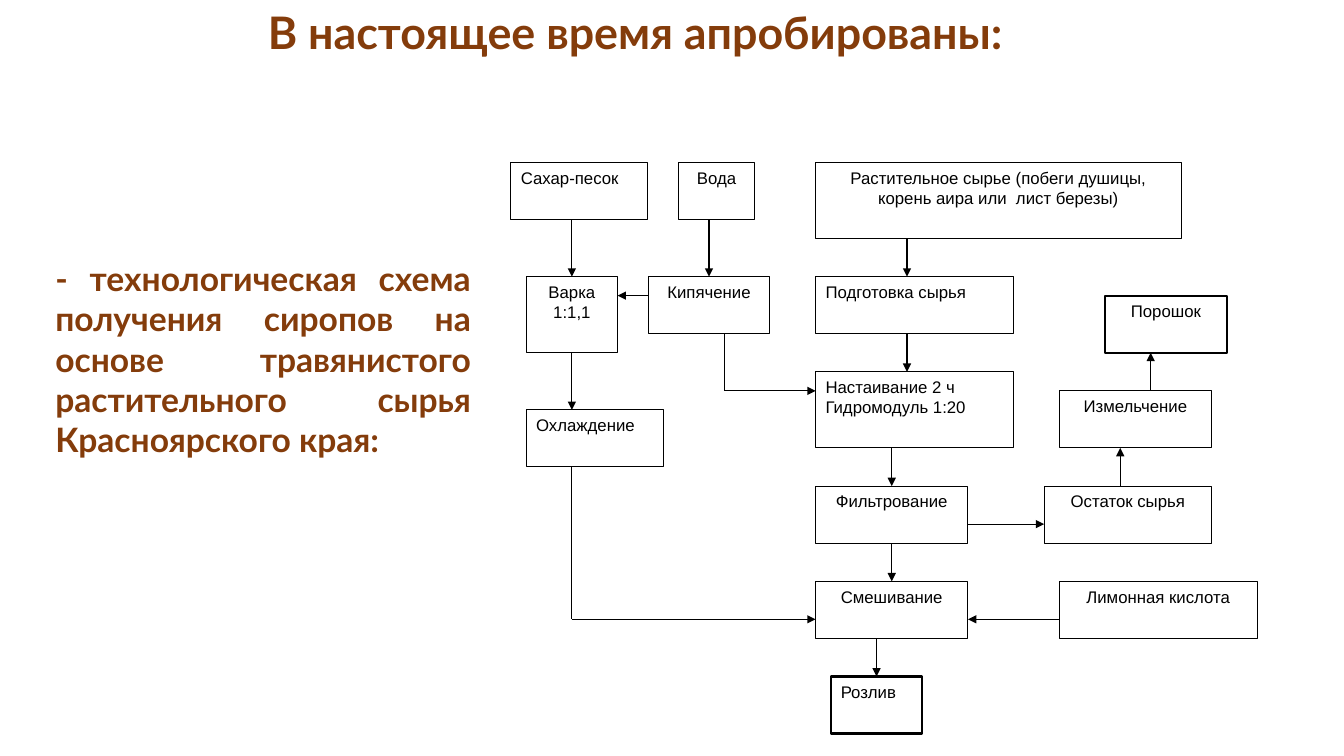
from dataclasses import dataclass

import lxml.etree
import pptx
import pptx.dml.color
import pptx.enum.shapes
import pptx.enum.text
import pptx.oxml.ns
import pptx.util

Pt = pptx.util.Pt
ALIGN = pptx.enum.text.PP_ALIGN
ANCHOR = pptx.enum.text.MSO_ANCHOR
BLACK = pptx.dml.color.RGBColor(0x00, 0x00, 0x00)
WHITE = pptx.dml.color.RGBColor(0xFF, 0xFF, 0xFF)
BROWN = pptx.dml.color.RGBColor(0x84, 0x3C, 0x0B)

# Flowchart grid: origin and step, in points
LEFT, TOP = 365, 116
STEP_X, STEP_Y = 10.88, 13.6

BOX_FONT = {"name": "Arial", "size": Pt(12), "bold": False}
TITLE_FONT = {"name": "Lato", "size": Pt(32), "bold": True}
SIDE_FONT = {"name": "Lato", "size": Pt(24), "bold": True}


@dataclass
class Box:
    """A step of the scheme, placed in grid units."""
    text: str
    col: int
    row: int
    cols: int
    rows: int = 3
    align: ALIGN = ALIGN.CENTER
    border: float = 0.75


@dataclass
class Link:
    """A line between two grid points."""
    x1: int
    y1: int
    x2: int
    y2: int
    arrow: bool = True


BOXES = [
    Box("Сахар-песок", 0, 0, 9, align=ALIGN.LEFT),
    Box("Вода", 11, 0, 5),
    Box("Растительное сырье (побеги душицы, корень аира или  лист березы)",
        20, 0, 24, 4),
    Box("Варка 1:1,1", 1, 6, 6, 4),
    Box("Кипячение", 9, 6, 8),
    Box("Подготовка сырья", 20, 6, 13, align=ALIGN.LEFT),
    Box("Порошок", 39, 7, 8, border=1.5),
    Box("Настаивание 2 ч\nГидромодуль 1:20", 20, 11, 13, 4, ALIGN.LEFT),
    Box("Измельчение", 36, 12, 10),
    Box("Охлаждение", 1, 13, 9, align=ALIGN.LEFT),
    Box("Фильтрование", 20, 17, 10),
    Box("Остаток сырья", 35, 17, 11),
    Box("Смешивание", 20, 22, 10),
    Box("Лимонная кислота", 36, 22, 13),
    Box("Розлив", 21, 27, 6, align=ALIGN.LEFT, border=1.5),
]

LINKS = [
    Link(4, 3, 4, 6),
    Link(13, 3, 13, 6),
    Link(26, 4, 26, 6),
    Link(9, 7, 7, 7),
    Link(26, 9, 26, 11),
    Link(14, 9, 14, 12, arrow=False),
    Link(14, 12, 20, 12),
    Link(4, 10, 4, 13),
    Link(4, 16, 4, 24, arrow=False),
    Link(4, 24, 20, 24),
    Link(25, 15, 25, 17),
    Link(30, 19, 35, 19),
    Link(40, 17, 40, 15),
    Link(42, 12, 42, 10),
    Link(25, 20, 25, 22),
    Link(36, 24, 30, 24),
    Link(24, 25, 24, 27),
]


def grid_x(col: int) -> pptx.util.Length:
    return Pt(LEFT + col * STEP_X)


def grid_y(row: int) -> pptx.util.Length:
    return Pt(TOP + row * STEP_Y)


def write_text(sp, text: str, align: ALIGN, font: dict, color) -> None:
    tf = sp.text_frame
    tf.word_wrap = True
    tf.vertical_anchor = ANCHOR.TOP
    tf.text = text
    for p in tf.paragraphs:
        p.alignment = align
        for r in p.runs:
            for key, value in font.items():
                setattr(r.font, key, value)
            r.font.color.rgb = color


def draw_box(s, box: Box) -> None:
    sp = s.shapes.add_shape(
        pptx.enum.shapes.MSO_SHAPE.RECTANGLE, grid_x(box.col), grid_y(box.row),
        Pt(box.cols * STEP_X), Pt(box.rows * STEP_Y))
    sp.shadow.inherit = False
    sp.fill.solid()
    sp.fill.fore_color.rgb = WHITE
    sp.line.color.rgb = BLACK
    sp.line.width = Pt(box.border)
    write_text(sp, box.text, box.align, BOX_FONT, BLACK)


def draw_link(s, link: Link) -> None:
    cn = s.shapes.add_connector(
        pptx.enum.shapes.MSO_CONNECTOR.STRAIGHT, grid_x(link.x1),
        grid_y(link.y1), grid_x(link.x2), grid_y(link.y2))
    cn.line.color.rgb = BLACK
    cn.line.width = Pt(0.75)
    qn = pptx.oxml.ns.qn
    sp_pr = cn.element.spPr
    if link.arrow:
        lxml.etree.SubElement(sp_pr.find(qn("a:ln")), qn("a:tailEnd"),
                              type="triangle")
    lxml.etree.SubElement(sp_pr, qn("a:effectLst"))


def draw_text(s, x: float, y: float, w: float, h: float, text: str,
              align: ALIGN, font: dict) -> None:
    sp = s.shapes.add_textbox(Pt(x), Pt(y), Pt(w), Pt(h))
    write_text(sp, text, align, font, BROWN)


def main() -> None:
    prs = pptx.Presentation()
    prs.slide_width, prs.slide_height = Pt(960), Pt(540)
    s = prs.slides.add_slide(prs.slide_layouts[6])

    # Title and side text
    draw_text(s, 26.6, 0, 862.6, 46, "В настоящее время апробированы: ",
              ALIGN.CENTER, TITLE_FONT)
    draw_text(s, 32.4, 180.7, 311, 152.6,
              "- технологическая схема получения сиропов на основе "
              "травянистого растительного сырья Красноярского края:",
              ALIGN.JUSTIFY, SIDE_FONT)

    # Flowchart
    for box in BOXES:
        draw_box(s, box)
    for link in LINKS:
        draw_link(s, link)

    prs.save("out.pptx")


if __name__ == "__main__":
    main()
